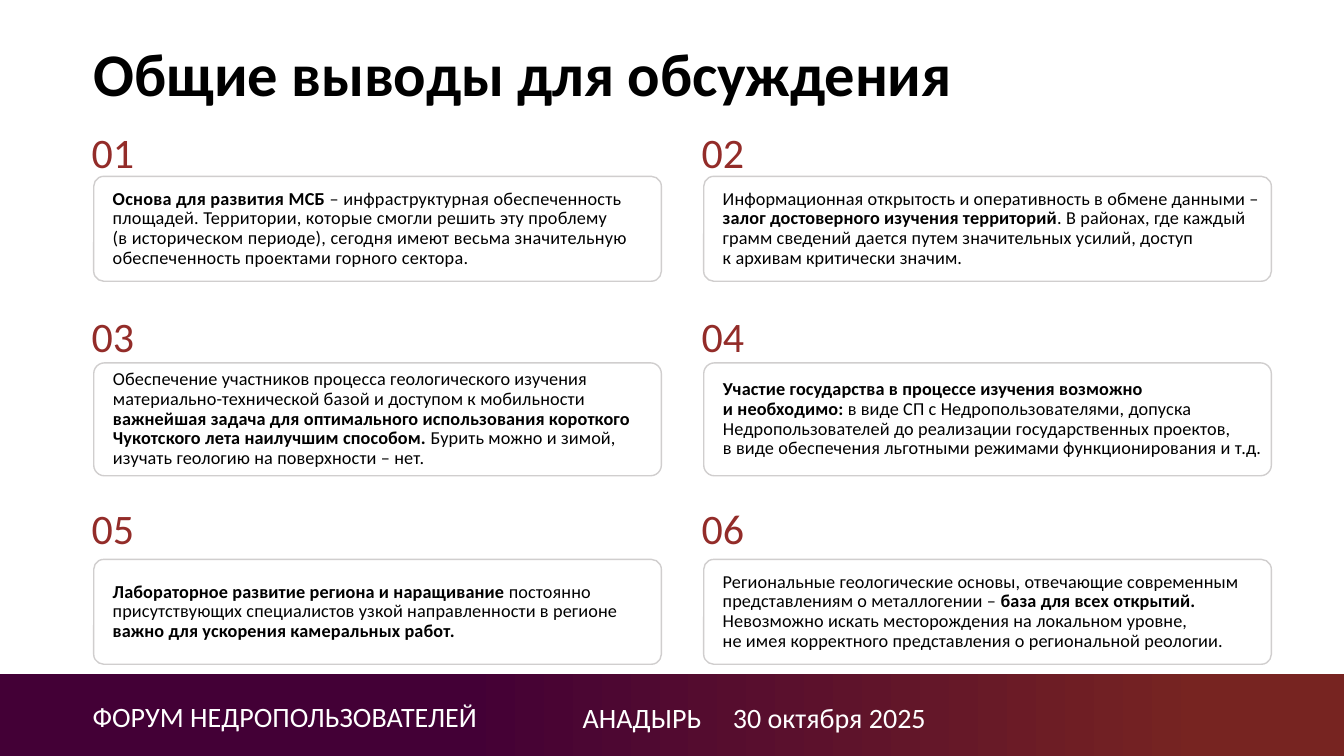
from dataclasses import dataclass

from lxml.etree import SubElement
from pptx import Presentation
from pptx.dml.color import RGBColor
from pptx.enum.shapes import MSO_SHAPE
from pptx.enum.text import MSO_ANCHOR
from pptx.oxml.ns import qn
from pptx.util import Emu, Inches, Pt


@dataclass(frozen=True)
class Theme:
    font: str = "Calibri"
    ink: str = "000000"
    white: str = "FFFFFF"
    number: str = "932C29"
    border: str = "D0CECE"
    band_start: str = "430036"
    band_end: str = "772421"
    title_size: float = 43.2
    number_size: float = 30
    footer_size: float = 20
    body_size: float = 13


THEME = Theme()
COLUMNS = (0.93, 6.98)
CARD_WIDTH = 5.63
ROWS = ((1.21, 1.75, 1.04), (3.03, 3.6, 1.12), (4.94, 5.55, 1.04))
CARDS = (
    (0.2, "**Основа для развития МСБ **– инфраструктурная обеспеченность площадей. "
     "Территории, которые смогли решить эту проблему\n(в историческом периоде), "
     "сегодня имеют весьма значительную обеспеченность проектами горного сектора."),
    (0.1, "Информационная открытость и оперативность в обмене данными – "
     "**залог достоверного изучения территорий**. В районах, где каждый грамм "
     "сведений дается путем значительных усилий, доступ\nк архивам критически значим."),
    (0.1, "Обеспечение участников процесса геологического изучения "
     "материально-технической базой и доступом к мобильности "
     "**важнейшая задача для оптимального использования короткого Чукотского лета "
     "наилучшим способом. **Бурить можно и зимой, изучать геологию на поверхности – нет."),
    (0.1, "**Участие государства в процессе изучения возможно\nи необходимо: **"
     "в виде СП с Недропользователями, допуска Недропользователей до реализации "
     "государственных проектов,\nв виде обеспечения льготными режимами "
     "функционирования и т.д."),
    (0.1, "**Лабораторное развитие региона и наращивание** постоянно присутствующих "
     "специалистов узкой направленности в регионе "
     "**важно для ускорения камеральных работ.**"),
    (0.1, "Региональные геологические основы, отвечающие современным представлениям "
     "о металлогении – **база для всех открытий.** Невозможно искать месторождения "
     "на локальном уровне,\nне имея корректного представления о региональной реологии."),
)


def set_font(p, size, color, bold=None):
    p.font.name = THEME.font
    p.font.size = Pt(size)
    p.font.color.rgb = RGBColor.from_string(color)
    p.font.bold = bold


def set_tracking(p, points):
    for r in p.runs:
        r._r.get_or_add_rPr().set("spc", str(round(points * 100)))


def set_insets(tf, left, right):
    tf.margin_left, tf.margin_right = Inches(left), Inches(right)
    tf.margin_top = tf.margin_bottom = Inches(0.05)


def add_label(s, box, text, size, color, left=0.0, bold=None, wrap=True, tab=None):
    tf = s.shapes.add_textbox(*map(Inches, box)).text_frame
    tf.word_wrap = wrap
    set_insets(tf, left, 0.1)
    p = tf.paragraphs[0]
    p.text = text
    if tab:
        tabs = SubElement(p._p.get_or_add_pPr(), qn("a:tabLst"))
        SubElement(tabs, qn("a:tab"), pos=str(Inches(tab)), algn="l")
    set_font(p, size, color, bold)
    return tf


def add_rich_text(p, text):
    for i, part in enumerate(text.split("**")):
        for j, line in enumerate(part.split("\n")):
            if j:
                p.add_line_break()
            if line:
                r = p.add_run()
                r.text = line
                r.font.bold = i % 2 == 1


def add_card(s, box, text, tracking):
    sp = s.shapes.add_shape(MSO_SHAPE.ROUNDED_RECTANGLE, *map(Inches, box))
    sp.adjustments[0] = 0.095
    sp.shadow.inherit = False
    sp.fill.background()
    sp.line.color.rgb = RGBColor.from_string(THEME.border)
    sp.line.width = Pt(1)
    tf = sp.text_frame
    tf.word_wrap = True
    tf.vertical_anchor = MSO_ANCHOR.MIDDLE
    set_insets(tf, 0.16, 0.05)
    p = tf.paragraphs[0]
    p.alignment = 1
    p.line_spacing = 0.9
    add_rich_text(p, text)
    set_font(p, THEME.body_size, THEME.ink)
    set_tracking(p, tracking)


def add_band(s, width):
    sp = s.shapes.add_shape(MSO_SHAPE.RECTANGLE, Emu(0), Inches(6.69), width, Inches(0.89))
    sp.shadow.inherit = False
    sp.line.fill.background()
    sp.fill.gradient()
    sp.fill.gradient_angle = 0
    stops = ((0.34, THEME.band_start), (0.9, THEME.band_end))
    for stop, (position, color) in zip(sp.fill.gradient_stops, stops):
        stop.position = position
        stop.color.rgb = RGBColor.from_string(color)


def add_footer(s, width):
    add_band(s, width)
    add_label(s, (0.82, 6.89, 4.5, 0.44), "ФОРУМ НЕДРОПОЛЬЗОВАТЕЛЕЙ",
              THEME.footer_size, THEME.white, left=0.1)
    add_label(s, (5.37, 6.9, 6.67, 0.44), "АНАДЫРЬ\t30 октября 2025",
              THEME.footer_size, THEME.white, left=0.41, tab=1.49)


def add_title(s):
    tf = add_label(s, (COLUMNS[0], 0.39, 11.76, 0.74), "Общие выводы для обсуждения",
                   THEME.title_size, THEME.ink, bold=True)
    tf.vertical_anchor = MSO_ANCHOR.MIDDLE
    tf.paragraphs[0].line_spacing = 0.9
    set_tracking(tf.paragraphs[0], -0.1)


def main():
    prs = Presentation()
    prs.slide_width, prs.slide_height = Inches(13.33), Inches(7.5)
    s = prs.slides.add_slide(prs.slide_layouts[6])
    add_footer(s, prs.slide_width)
    for i, (tracking, text) in enumerate(CARDS):
        row, column = divmod(i, len(COLUMNS))
        number_top, card_top, height = ROWS[row]
        left = COLUMNS[column]
        add_label(s, (left - 0.02, number_top, 0.53, 0.61), f"{i + 1:02}",
                  THEME.number_size, THEME.number, wrap=False)
        add_card(s, (left, card_top, CARD_WIDTH, height), text, tracking)
    add_title(s)
    prs.save("out.pptx")


if __name__ == "__main__":
    main()
